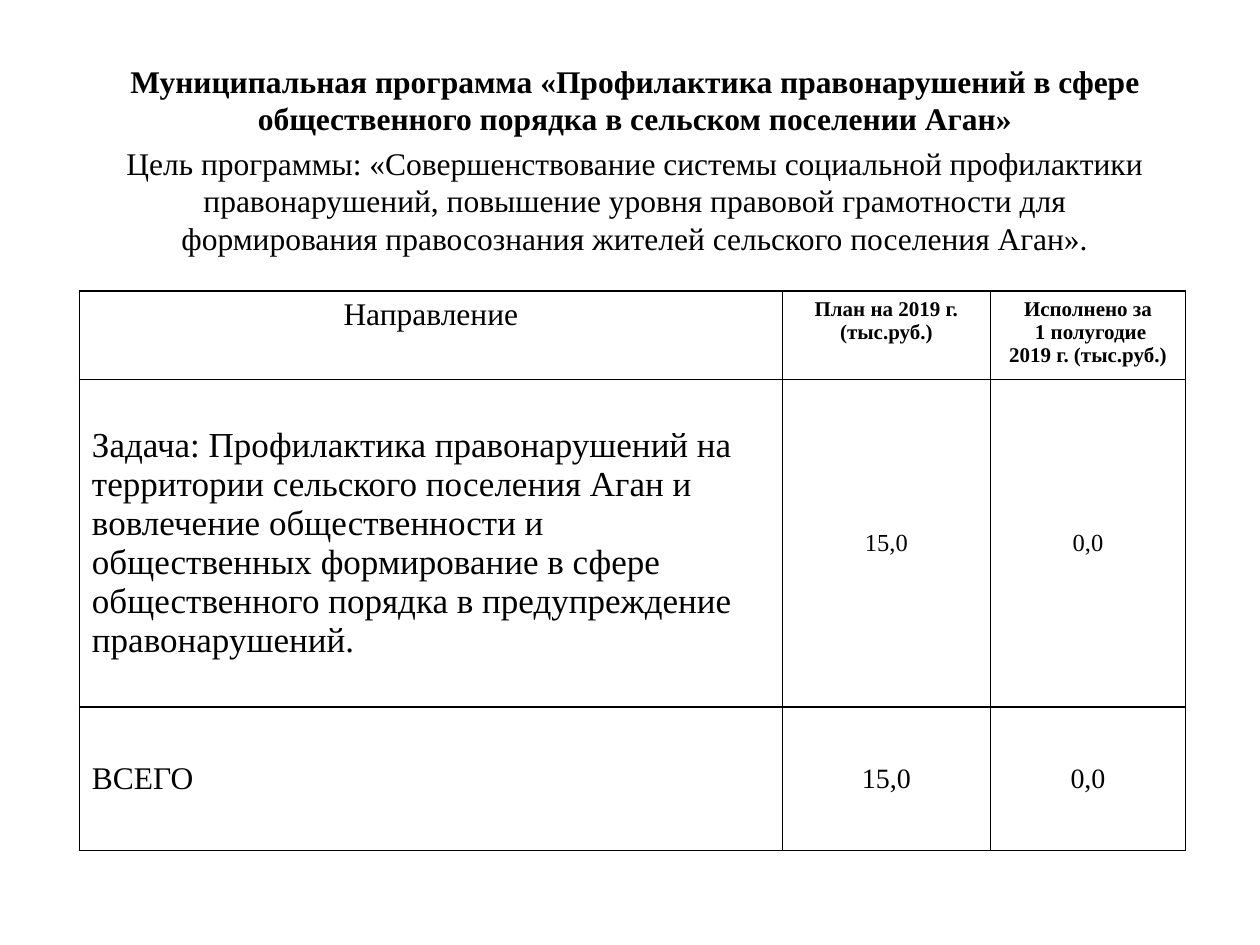
"""Builds the slide on the crime prevention programme and its budget."""
from dataclasses import dataclass

from lxml import etree
from pptx import Presentation
from pptx.dml.color import RGBColor
from pptx.enum.text import MSO_ANCHOR, PP_ALIGN
from pptx.oxml.ns import qn
from pptx.util import Inches, Pt

CENTER, LEFT = PP_ALIGN.CENTER, PP_ALIGN.LEFT
TOP, MIDDLE = MSO_ANCHOR.TOP, MSO_ANCHOR.MIDDLE


@dataclass(frozen=True)
class Theme:
    font: str = "Times New Roman"
    ink: str = "000000"
    intro: int = 18
    header: int = 12
    task: int = 20
    value: int = 14
    total: int = 16
    border: int = 1


THEME = Theme()

INTRO = [
    ("Муниципальная программа «Профилактика правонарушений в сфере "
     "общественного порядка в сельском поселении Аган»", True),
    ("Цель программы: «Совершенствование системы социальной профилактики "
     "правонарушений, повышение уровня правовой грамотности для "
     "формирования правосознания жителей сельского поселения Аган».", False),
]
TASK = ("Задача: Профилактика правонарушений на территории сельского поселения "
        "Аган и вовлечение общественности и общественных формирование в сфере "
        "общественного порядка в предупреждение правонарушений.")
ROWS = [
    [(["Направление"], THEME.intro),
     (["План на 2019 г. (тыс.руб.)"], THEME.header),
     (["Исполнено за", " 1 полугодие", "2019 г. (тыс.руб.)"], THEME.header)],
    [([TASK], THEME.task), (["15,0"], THEME.value), (["0,0"], THEME.value)],
    [(["ВСЕГО"], THEME.intro), (["15,0"], THEME.total), (["0,0"], THEME.total)],
]
COLUMN_WIDTHS = [5.58, 1.65, 1.55]
ROW_HEIGHTS = [0.46, 2.6, 1.14]


def write(frame, lines, size, bold, align):
    for index, line in enumerate(lines):
        para = frame.paragraphs[0] if index == 0 else frame.add_paragraph()
        para.text = line
        para.alignment = align
        para.font.name = THEME.font
        para.font.size = Pt(size)
        para.font.bold = bold
        para.font.color.rgb = RGBColor.from_string(THEME.ink)


def add_borders(cell):
    properties = cell._tc.get_or_add_tcPr()
    for position, side in enumerate(("lnL", "lnR", "lnT", "lnB")):
        line = etree.Element(qn(f"a:{side}"), w=str(Pt(THEME.border)))
        fill = etree.SubElement(line, qn("a:solidFill"))
        etree.SubElement(fill, qn("a:srgbClr"), val=THEME.ink)
        properties.insert(position, line)


def add_intro(page):
    box = page.shapes.add_textbox(Inches(0.75), Inches(0.44), Inches(8.58), Inches(6.69))
    frame = box.text_frame
    frame.word_wrap = True
    write(frame, [line for line, _ in INTRO], THEME.intro, False, CENTER)
    for para, (_, bold) in zip(frame.paragraphs, INTRO):
        para.font.bold = bold
        para.space_before = Pt(THEME.intro * 0.2)


def add_budget(page):
    table = page.shapes.add_table(
        len(ROWS), len(COLUMN_WIDTHS), Inches(0.63), Inches(2.31),
        Inches(sum(COLUMN_WIDTHS)), Inches(sum(ROW_HEIGHTS))).table
    table.first_row = table.horz_banding = False
    for column, width in zip(table.columns, COLUMN_WIDTHS):
        column.width = Inches(width)
    for row, height in zip(table.rows, ROW_HEIGHTS):
        row.height = Inches(height)
    for row_index, row in enumerate(ROWS):
        is_header = row_index == 0
        for column_index, (lines, size) in enumerate(row):
            cell = table.cell(row_index, column_index)
            cell.fill.background()
            cell.vertical_anchor = TOP if is_header else MIDDLE
            is_label = column_index == 0
            align = LEFT if is_label and not is_header else CENTER
            write(cell.text_frame, lines, size, is_header and not is_label, align)
            add_borders(cell)


def main():
    deck = Presentation()
    deck.slide_width, deck.slide_height = Inches(10), Inches(7.5)
    page = deck.slides.add_slide(deck.slide_layouts[6])
    add_intro(page)
    add_budget(page)
    deck.save("out.pptx")


if __name__ == "__main__":
    main()
